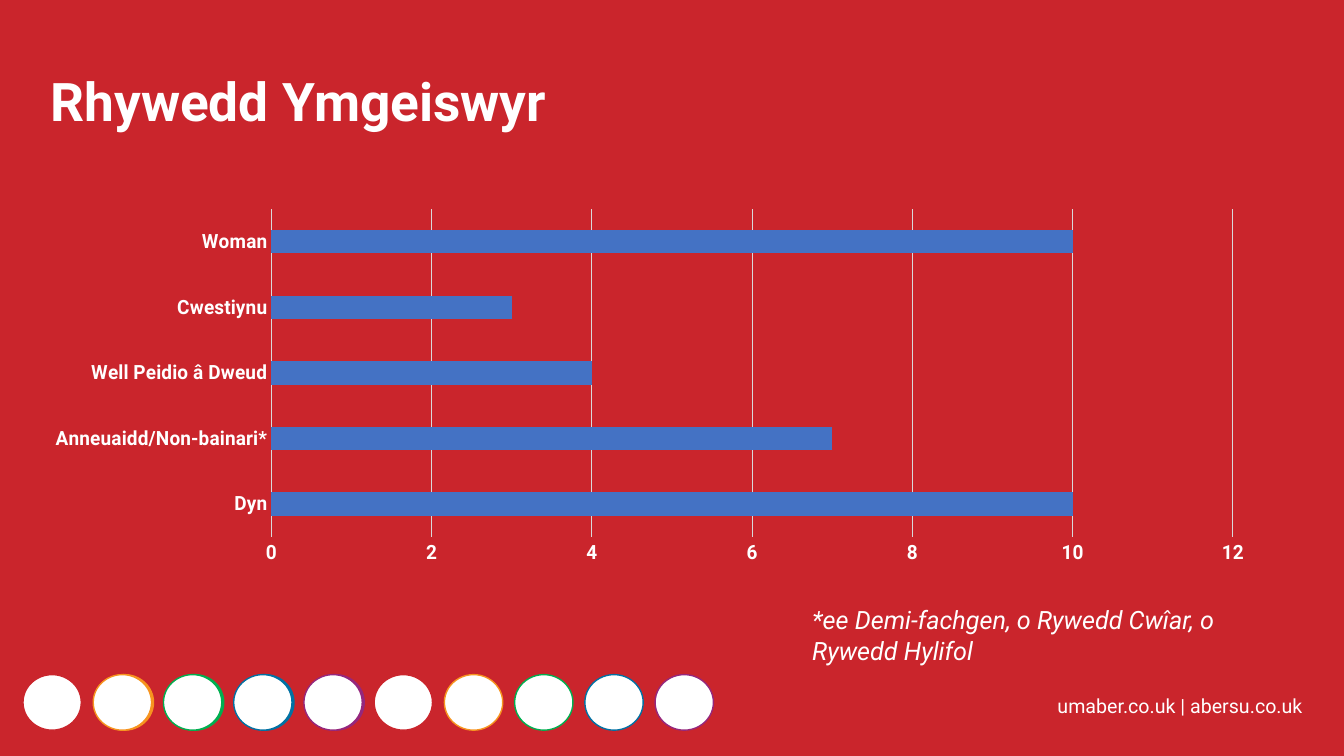
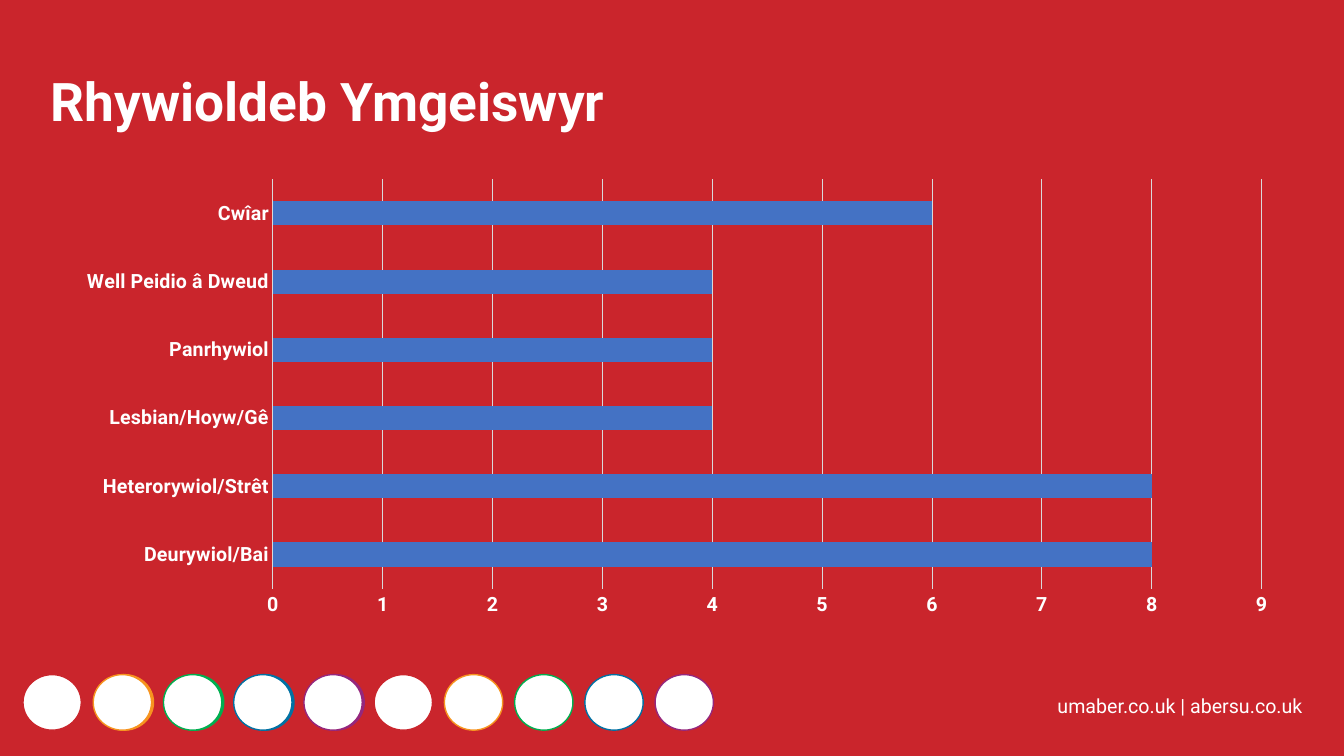
import pptx
import pptx.chart.data
import pptx.dml.color
import pptx.enum.chart
import pptx.enum.shapes
import pptx.enum.text
import pptx.oxml
import pptx.oxml.ns
import pptx.util
from pptx.util import Cm

FONT = "Roboto"
COLOURS = {
    "red": "CA252C",
    "orange": "F7941F",
    "green": "00AF50",
    "blue": "0171A3",
    "purple": "95277D",
    "white": "FFFFFF",
    "bar": "4472C4",
    "grid": "D9D9D9",
}
RING_ORDER = ["red", "orange", "green", "blue", "purple"]

TITLE_BOX = (Cm(1.02), Cm(1.78), Cm(23.16), Cm(2.24))
RINGS_BOX = (Cm(0.58), Cm(17), Cm(17.4), Cm(1.4))
ADDRESS_BOX = (Cm(26.4), Cm(17.37), Cm(7.11), Cm(0.86))

SLIDES = [
    {
        "title": "Rhywedd Ymgeiswyr",
        "counts": {
            "Dyn": 10,
            "Anneuaidd/Non-bainari*": 7,
            "Well Peidio â Dweud": 4,
            "Cwestiynu": 3,
            "Woman": 10,
        },
        "chart_box": (Cm(1.4), Cm(4.7), Cm(30.53), Cm(9.8)),
        "axis_max": 12,
        "axis_step": 2,
        "plot_area": {"x": 0.152, "y": 0.058, "w": 0.819, "h": 0.843},
        "footnote": "*ee Demi-fachgen, o Rywedd Cwîar, o Rywedd Hylifol",
        "footnote_box": (Cm(20.22), Cm(15.11), Cm(12.75), Cm(1.8)),
    },
    {
        "title": "Rhywioldeb Ymgeiswyr",
        "counts": {
            "Deurywiol/Bai": 8,
            "Heterorywiol/Strêt": 8,
            "Lesbian/Hoyw/Gê": 4,
            "Panrhywiol": 4,
            "Well Peidio â Dweud": 4,
            "Cwîar": 6,
        },
        "chart_box": (Cm(1.57), Cm(4.29), Cm(30.99), Cm(11.48)),
        "axis_max": 9,
        "axis_step": 1,
    },
]


def rgb(name):
    return pptx.dml.color.RGBColor.from_string(COLOURS[name])


def style_font(font, size, bold=False, italic=False, colour="white"):
    font.name = FONT
    font.size = pptx.util.Pt(size)
    font.bold = bold
    font.italic = italic
    font.color.rgb = rgb(colour)


def write_text(frame, text, line_spacing=1.0, **font_format):
    frame.word_wrap = True
    frame.auto_size = pptx.enum.text.MSO_AUTO_SIZE.NONE
    frame.vertical_anchor = pptx.enum.text.MSO_ANCHOR.TOP
    paragraph = frame.paragraphs[0]
    paragraph.alignment = pptx.enum.text.PP_ALIGN.LEFT
    paragraph.line_spacing = line_spacing
    run = paragraph.add_run()
    run.text = text
    style_font(run.font, **font_format)


def add_title(slide, box, text):
    title = slide.shapes.title
    title.left, title.top, title.width, title.height = box
    write_text(title.text_frame, text, line_spacing=0.9, size=38, bold=True)


def add_text(slide, box, text, **text_format):
    write_text(slide.shapes.add_textbox(*box).text_frame, text, **text_format)


def add_ring(slide, box, fill, outline):
    ring = slide.shapes.add_shape(pptx.enum.shapes.MSO_SHAPE.OVAL, *box)
    ring.shadow.inherit = False
    ring.fill.solid()
    ring.fill.fore_color.rgb = rgb(fill)
    ring.line.color.rgb = rgb(outline)
    ring.line.width = pptx.util.Pt(1)


def add_rings(slide, box):
    """Ten white rings across the box; the first five have a coloured edge behind."""
    left, top, width, height = box
    diameter = Cm(1.47)
    count = 2 * len(RING_ORDER)
    pitch = (width - diameter) // (count - 1)
    edge_shift = Cm(0.05)
    for index, colour in enumerate(RING_ORDER):
        edge_left = left + edge_shift + index * pitch
        add_ring(slide, (edge_left, top, diameter, height), colour, colour)
    for index, colour in enumerate(RING_ORDER * 2):
        add_ring(slide, (left + index * pitch, top, diameter, height), "white", colour)


def add_footer(slide):
    add_rings(slide, RINGS_BOX)
    add_text(slide, ADDRESS_BOX, "umaber.co.uk | abersu.co.uk", size=14)


def place_plot_area(chart, plot_area):
    """Fix the inner plot area, given as fractions of the chart."""
    area = chart.element.find(".//" + pptx.oxml.ns.qn("c:plotArea"))
    for automatic in area.findall(pptx.oxml.ns.qn("c:layout")):
        area.remove(automatic)
    modes = '<c:xMode val="edge"/><c:yMode val="edge"/>'
    fractions = "".join(f'<c:{key} val="{value}"/>' for key, value in plot_area.items())
    area.insert(0, pptx.oxml.parse_xml(
        f'<c:layout {pptx.oxml.ns.nsdecls("c")}><c:manualLayout>'
        f'<c:layoutTarget val="inner"/>{modes}{fractions}'
        "</c:manualLayout></c:layout>"
    ))


def style_axis_line(line):
    line.color.rgb = rgb("grid")
    line.width = pptx.util.Pt(0.75)


def add_count_chart(slide, box, counts, axis_max, axis_step, plot_area=None):
    chart_data = pptx.chart.data.CategoryChartData()
    chart_data.categories = list(counts)
    chart_data.add_series("Series 1", list(counts.values()))
    chart = slide.shapes.add_chart(
        pptx.enum.chart.XL_CHART_TYPE.BAR_CLUSTERED, *box, chart_data
    ).chart
    chart.has_title = False
    chart.has_legend = False
    style_font(chart.font, size=14, bold=True)

    bars = chart.plots[0]
    bars.gap_width = 182
    bars.vary_by_categories = False
    bar_fill = bars.series[0].format.fill
    bar_fill.solid()
    bar_fill.fore_color.rgb = rgb("bar")

    categories, values = chart.category_axis, chart.value_axis
    for axis in (categories, values):
        axis.major_tick_mark = pptx.enum.chart.XL_TICK_MARK.NONE
        axis.minor_tick_mark = pptx.enum.chart.XL_TICK_MARK.NONE
        style_font(axis.tick_labels.font, size=14, bold=True)
    categories.has_major_gridlines = False
    style_axis_line(categories.format.line)
    values.minimum_scale = 0
    values.maximum_scale = axis_max
    values.major_unit = axis_step
    values.has_major_gridlines = True
    style_axis_line(values.major_gridlines.format.line)
    values.format.line.fill.background()
    if plot_area:
        place_plot_area(chart, plot_area)


def add_chart_slide(deck, content):
    slide = deck.slides.add_slide(deck.slide_layouts.get_by_name("Title Only"))
    add_footer(slide)
    add_title(slide, TITLE_BOX, content["title"])
    if "footnote" in content:
        add_text(slide, content["footnote_box"], content["footnote"], size=18, italic=True)
    add_count_chart(
        slide, content["chart_box"], content["counts"],
        content["axis_max"], content["axis_step"], content.get("plot_area"),
    )


def main():
    deck = pptx.Presentation()
    deck.slide_width, deck.slide_height = Cm(33.87), Cm(19.05)
    background = deck.slide_master.background.fill
    background.solid()
    background.fore_color.rgb = rgb("red")
    for content in SLIDES:
        add_chart_slide(deck, content)
    deck.save("out.pptx")


if __name__ == "__main__":
    main()
